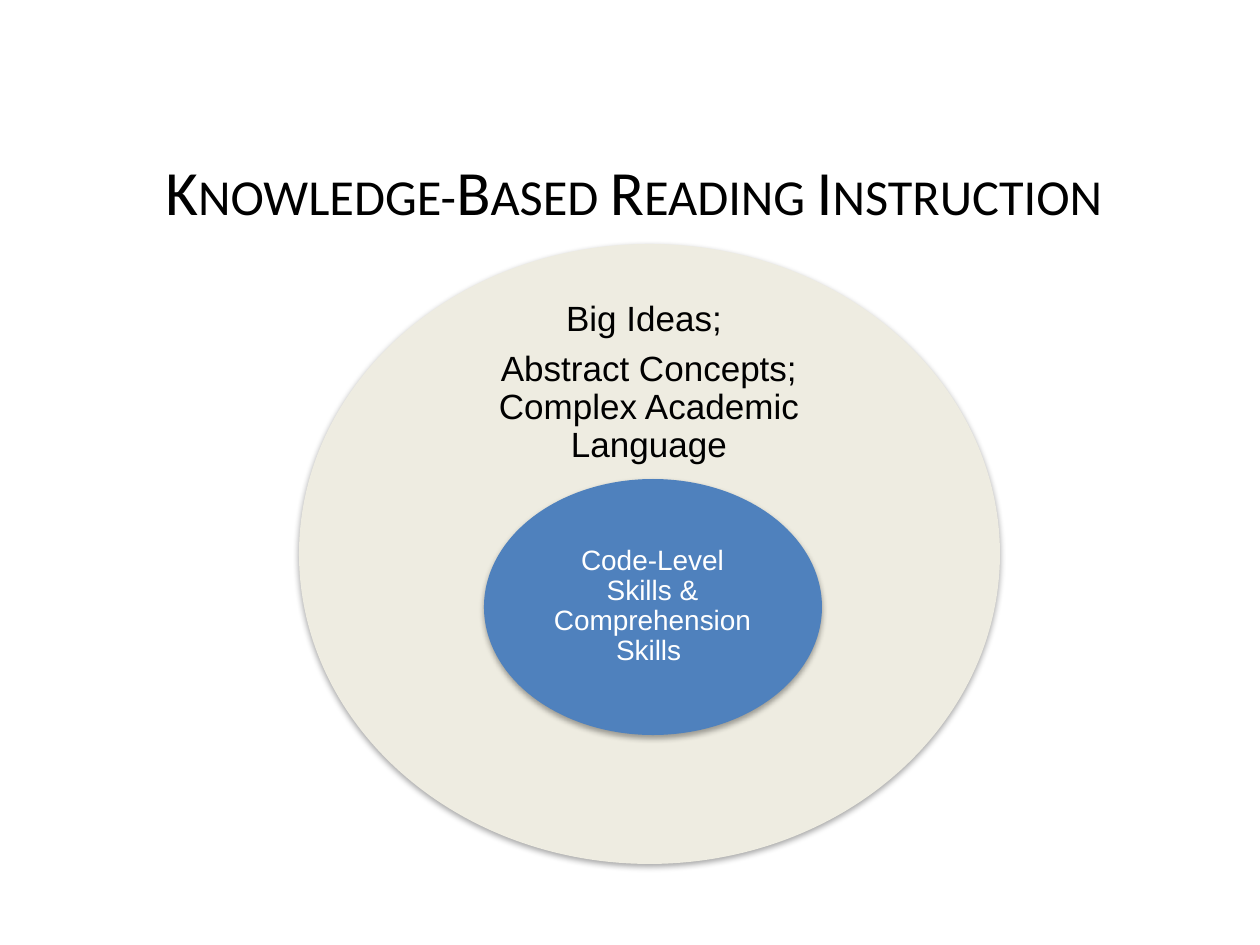
from lxml.etree import SubElement
from pptx import Presentation
from pptx.dml.color import RGBColor
from pptx.enum.shapes import MSO_SHAPE
from pptx.enum.text import MSO_ANCHOR, MSO_AUTO_SIZE, PP_ALIGN
from pptx.oxml.ns import qn
from pptx.util import Pt

PX = 914400 / 126


def px(*lengths):
    return [round(n * PX) for n in lengths]


def write(tf, lines, font, size, color, insets):
    """Fill a frame with centred paragraphs; insets run left, top, right, bottom."""
    tf.word_wrap = True
    tf.auto_size = MSO_AUTO_SIZE.NONE
    tf.vertical_anchor = MSO_ANCHOR.MIDDLE
    tf.margin_left, tf.margin_top, tf.margin_right, tf.margin_bottom = px(*insets)
    for i, line in enumerate(lines):
        p = tf.add_paragraph() if i else tf.paragraphs[0]
        p.alignment = PP_ALIGN.CENTER
        r = p.add_run()
        r.text = line
        r.font.name, r.font.size = font, Pt(size)
        r.font.color.rgb = RGBColor.from_string(color)


prs = Presentation()
prs.slide_width, prs.slide_height = px(1260, 945)
s = prs.slides.add_slide(prs.slide_layouts[5])

circles = [
    dict(oval=(299, 244, 701, 620), fill="EEECE1", box=(465, 290, 368, 106),
         lines=["Big Ideas; ", "Abstract Concepts; Complex Academic Language"],
         size=20, color="000000", insets=(29, 80, 29, 0)),
    dict(oval=(484, 479, 338, 256), fill="4F81BD", box=(533, 543, 239, 127),
         lines=["Code-Level Skills & Comprehension Skills "],
         size=16, color="FFFFFF", insets=(15, 15, 15, 15)),
]
for c in circles:
    sp = s.shapes.add_shape(MSO_SHAPE.OVAL, *px(*c["oval"]))
    sp.fill.solid()
    sp.fill.fore_color.rgb = RGBColor.from_string(c["fill"])
    sp.line.fill.background()
    sp.shadow.inherit = False
    effects = sp._element.spPr.find(qn("a:effectLst"))
    shadow = SubElement(effects, qn("a:outerShdw"), blurRad="40000", dist="23000",
                        dir="5400000", rotWithShape="0")
    black = SubElement(shadow, qn("a:srgbClr"), val="000000")
    SubElement(black, qn("a:alpha"), val="35000")

    tf = s.shapes.add_textbox(*px(*c["box"])).text_frame
    write(tf, c["lines"], "Arial", c["size"], c["color"], c["insets"])
    for p in tf.paragraphs:
        p.line_spacing = 0.9
        p.space_after = Pt(c["size"] * 0.35)

title = s.shapes.title
title.left, title.top, title.width, title.height = px(92, 171, 1084, 115)
write(title.text_frame, ["Knowledge-Based Reading Instruction"],
      "Calibri", 36, "000000", (13, 6, 13, 82))
title.text_frame.paragraphs[0].runs[0]._r.get_or_add_rPr().set("cap", "small")
s.shapes._spTree.append(title._element)

prs.save("out.pptx")
